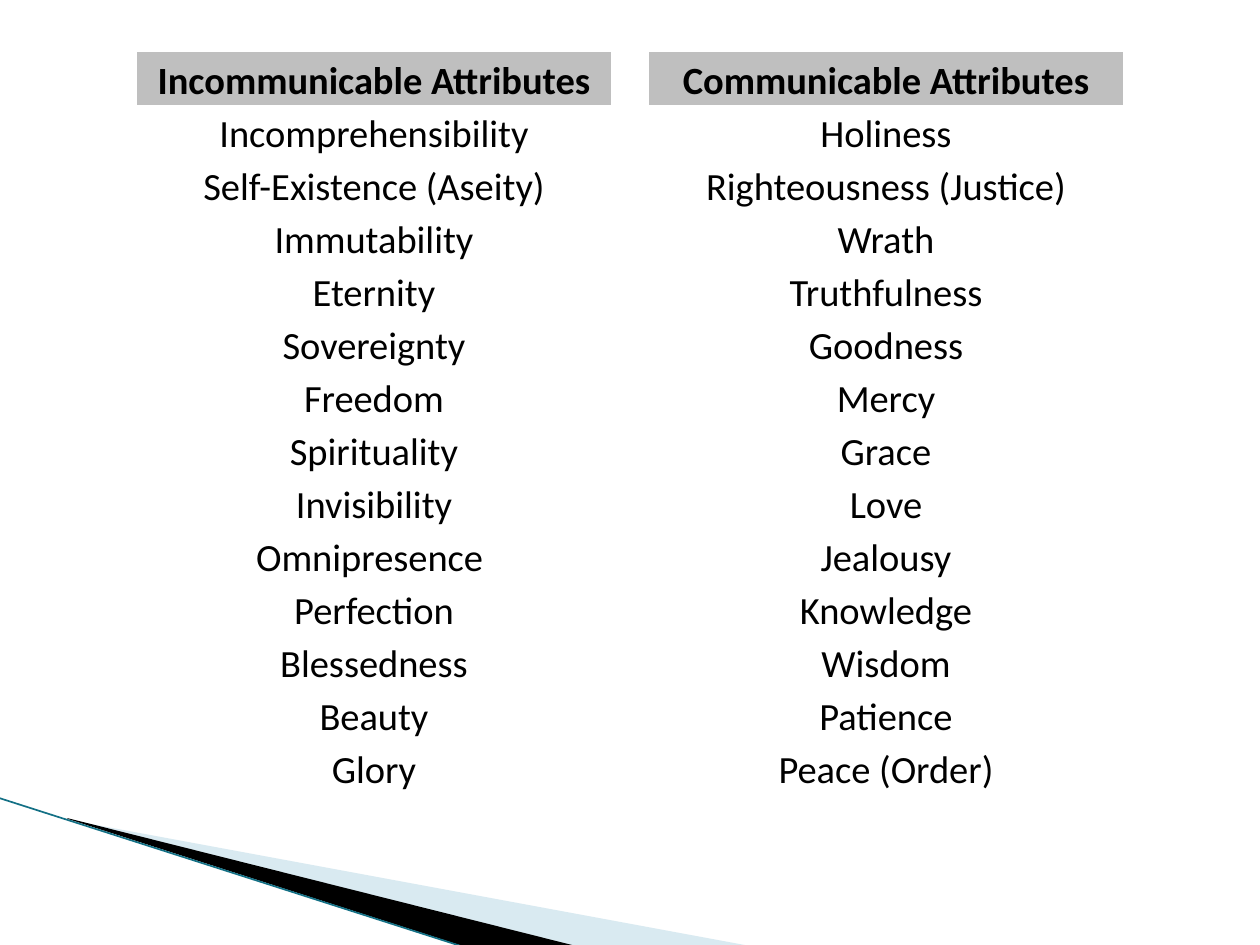
from dataclasses import dataclass

from lxml import etree
from pptx import Presentation
from pptx.dml.color import RGBColor
from pptx.enum.text import MSO_ANCHOR, PP_ALIGN
from pptx.enum.shapes import MSO_CONNECTOR
from pptx.oxml.ns import qn
from pptx.util import Pt

BOTTOM = MSO_ANCHOR.BOTTOM
CENTER = PP_ALIGN.CENTER
STRAIGHT = MSO_CONNECTOR.STRAIGHT
PLAIN = "{2D5ABB26-0587-4C30-8999-92F81FD0307C}"
SCALE = 914400 / 126


@dataclass(frozen=True)
class Theme:
    font: str = "Calibri"
    size: int = 22
    ink: str = "000000"
    head: str = "BFBFBF"
    pale: str = "A0CBDC"
    edge: str = "137085"
    alpha: int = 40
    width: float = 0.95


THEME = Theme()

ROWS = [
    ("Incommunicable Attributes", "Communicable Attributes"),
    ("Incomprehensibility", "Holiness"),
    ("Self-Existence (Aseity)", "Righteousness (Justice)"),
    ("Immutability", "Wrath"),
    ("Eternity", "Truthfulness"),
    ("Sovereignty", "Goodness"),
    ("Freedom", "Mercy"),
    ("Spirituality", "Grace"),
    ("Invisibility", "Love"),
    ("Omnipresence ", "Jealousy"),
    ("Perfection", "Knowledge"),
    ("Blessedness", "Wisdom"),
    ("Beauty", "Patience"),
    ("Glory", "Peace (Order)"),
]


def px(n):
    return round(n * SCALE)


def rgb(code):
    return RGBColor.from_string(code)


def assign(item, values):
    for name, value in values.items():
        setattr(item, name, value)


def add_wedge(slide, box, points, color, alpha=100):
    """Draw a filled outline; points are px from the box corner."""
    left, top = box[:2]
    spots = [(px(left + x), px(top + y)) for x, y in points]
    pen = slide.shapes.build_freeform(*spots[0])
    pen.add_line_segments(spots[1:])
    wedge = pen.convert_to_shape()
    wedge.shadow.inherit = False
    wedge.line.fill.background()
    wedge.fill.solid()
    wedge.fill.fore_color.rgb = rgb(color)
    if alpha < 100:
        tint = wedge.fill._xPr.find(".//" + qn("a:srgbClr"))
        etree.SubElement(tint, qn("a:alpha")).set("val", str(alpha * 1000))


def add_swoosh(slide, box):
    left, top, width, height = box
    add_wedge(slide, box, [(70, 22), (751, 148), (576, 148), (70, 21)],
              THEME.pale, THEME.alpha)
    add_wedge(slide, box, [(68, 20), (577, 148), (470, 150), (69, 21)],
              THEME.ink)
    edge = slide.shapes.add_connector(
        STRAIGHT, px(left), px(top), px(left + 468), px(top + height))
    edge.line.color.rgb = rgb(THEME.edge)
    edge.line.width = Pt(THEME.width)
    etree.SubElement(edge._element.spPr, qn("a:effectLst"))


def fill_cell(cell, text, head):
    assign(cell, {
        "text": text, "vertical_anchor": BOTTOM,
        "margin_left": px(2), "margin_right": px(2),
        "margin_top": px(2), "margin_bottom": 0,
    })
    para = cell.text_frame.paragraphs[0]
    para.alignment = CENTER
    font = para.runs[0].font
    assign(font, {"name": THEME.font, "size": Pt(THEME.size), "bold": head})
    font.color.rgb = rgb(THEME.ink)
    if head:
        cell.fill.solid()
        cell.fill.fore_color.rgb = rgb(THEME.head)


def add_lists(slide, box, gap):
    """Place the two lists in one table, with an empty column between."""
    left, top, width, height = box
    frame = slide.shapes.add_table(len(ROWS), 3, *map(px, box))
    table = frame.table
    assign(table, {"first_row": False, "horz_banding": False})
    table._tbl.tblPr.find(qn("a:tableStyleId")).text = PLAIN
    side = (width - gap) // 2
    for column, size in zip(table.columns, (side, gap, side)):
        column.width = px(size)
    for row in table.rows:
        row.height = px(height // len(ROWS))
    for cell in table.iter_cells():
        cell.fill.background()
    for r, pair in enumerate(ROWS):
        for c, text in zip((0, 2), pair):
            fill_cell(table.cell(r, c), text, r == 0)


def main():
    deck = Presentation()
    assign(deck, {"slide_width": px(1260), "slide_height": px(945)})
    slide = deck.slides.add_slide(deck.slide_layouts[6])
    add_swoosh(slide, (-1, 798, 751, 150))
    add_lists(slide, (137, 52, 986, 742), 38)
    deck.save("out.pptx")


if __name__ == "__main__":
    main()
